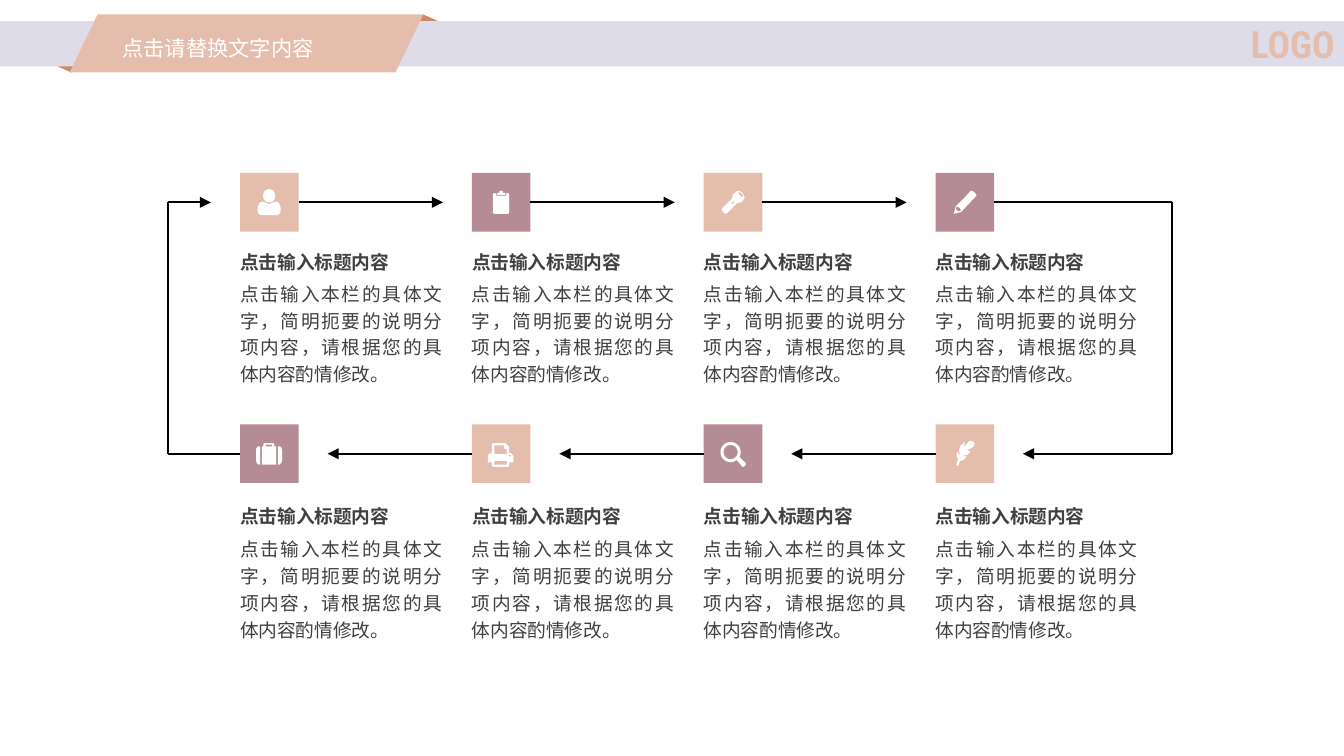
from dataclasses import dataclass
from math import cos, pi, sin
from typing import Any, NamedTuple

from lxml.etree import SubElement
from pptx import Presentation
from pptx.dml.color import RGBColor
from pptx.enum.shapes import MSO_CONNECTOR, MSO_SHAPE
from pptx.enum.text import MSO_ANCHOR, MSO_AUTO_SIZE, PP_ALIGN
from pptx.oxml.ns import qn
from pptx.util import Pt

PEACH = RGBColor(0xE4, 0xBD, 0xAC)
MAUVE = RGBColor(0xB5, 0x8C, 0x95)
RUST = RGBColor(0xCE, 0x88, 0x68)
LAVENDER = RGBColor(0xDE, 0xDC, 0xE9)
WHITE = RGBColor(0xFF, 0xFF, 0xFF)
BLACK = RGBColor(0, 0, 0)
GRAY = RGBColor(0x40, 0x40, 0x40)

CJK = "Noto Sans CJK SC"
HEADING = "点击输入标题内容"
BODY = "点击输入本栏的具体文字，简明扼要的说明分项内容，请根据您的具体内容酌情修改。"

LEFT, PITCH, TILE = 128.6, 124.2, 31.4
ARROW = 77.3
LOOP_LEFT, LOOP_RIGHT = 89.8, 627.8

Contour = list[tuple[float, float]]
Outline = list[Contour]


class Box(NamedTuple):
    x: float
    y: float
    w: float
    h: float


@dataclass
class Row:
    tile_y: float
    heading_y: float
    body_y: float
    colors: tuple[RGBColor, RGBColor]
    icons: list[list[Outline]]

    @property
    def mid(self) -> float:
        return self.tile_y + TILE / 2


def ellipse(cx: float, cy: float, rx: float, ry: float) -> Contour:
    angles = [2 * pi * i / 32 for i in range(32)]
    return [(cx + rx * cos(a), cy + ry * sin(a)) for a in angles]


CASE_SIDE = [(108, 117), (97, 117), (88, 126), (86, 138), (86, 195), (90, 207), (100, 215), (108, 215)]

PERSON = [
    [ellipse(156, 122, 32, 36)],
    [[(120, 153), (140, 160), (156, 167), (172, 160), (192, 153), (208, 160), (218, 185), (218, 205),
      (212, 220), (198, 226), (115, 226), (100, 220), (94, 205), (94, 185), (104, 160)]],
]
CLIPBOARD = [
    [[(113, 113), (120, 107), (126, 107), (133, 122), (181, 122), (188, 107), (194, 107), (200, 113),
      (200, 213), (194, 219), (120, 219), (113, 213)]],
    [[(133, 107), (146, 107), (149, 96), (165, 96), (168, 107), (181, 107), (177, 119), (137, 119)]],
]
FLASHLIGHT = [[
    [(212, 115), (200, 100), (186, 95), (176, 98), (156, 115), (153, 136), (98, 190), (98, 200),
     (106, 212), (118, 219), (126, 216), (180, 160), (200, 158), (217, 140), (219, 128)],
    [(185, 101), (196, 104), (208, 116), (212, 128), (200, 126), (188, 114)],
    [(150, 160), (158, 152), (164, 153), (163, 160), (155, 167), (149, 167)],
]]
PENCIL = [[
    [(98, 219), (108, 180), (150, 138), (189, 95), (198, 96), (213, 108), (220, 121), (178, 166), (137, 209)],
    [(108, 194), (113, 180), (118, 181), (130, 187), (137, 200), (132, 203), (122, 207), (117, 200)],
]]
SUITCASE = [
    [CASE_SIDE],
    [[(117, 215), (117, 117), (125, 117), (125, 105), (130, 100), (178, 100), (184, 105), (184, 117),
      (194, 117), (194, 215)],
     [(137, 117), (137, 108), (173, 108), (173, 117)]],
    [[(311 - x, y) for x, y in CASE_SIDE]],
]
PRINTER = [[
    [(108, 155), (108, 106), (115, 100), (178, 100), (200, 120), (200, 152), (212, 155), (222, 170),
     (222, 204), (200, 204), (200, 222), (196, 227), (112, 227), (108, 222), (108, 204), (86, 204),
     (86, 168), (95, 155)],
    [(120, 160), (120, 112), (172, 112), (172, 128), (178, 132), (188, 132), (188, 160)],
    [(120, 196), (188, 196), (188, 216), (120, 216)],
    ellipse(205, 168, 5, 5),
]]
MAGNIFIER = [
    [ellipse(144, 148, 54, 54), ellipse(144, 148, 38, 38)],
    [[(175, 188), (190, 172), (225, 207), (226, 216), (217, 226), (208, 227)]],
]
FEATHER = [[
    [(122, 223), (131, 196), (150, 191), (166, 173), (148, 167), (170, 163), (187, 146), (168, 138),
     (202, 122), (210, 101), (198, 90), (182, 88), (152, 122), (156, 94), (132, 116), (126, 140),
     (131, 170), (115, 143), (113, 165), (120, 188), (112, 216)],
]]

ROWS = [
    Row(92.7, 132.5, 149, (PEACH, MAUVE), [PERSON, CLIPBOARD, FLASHLIGHT, PENCIL]),
    Row(227.4, 268.6, 285.8, (MAUVE, PEACH), [SUITCASE, PRINTER, MAGNIFIER, FEATHER]),
]


def apply(obj: Any, fmt: dict[str, Any]) -> None:
    for name, value in fmt.items():
        setattr(obj, name, value)


def paint(sp: Any, color: RGBColor) -> None:
    sp.shadow.inherit = False
    sp.fill.solid()
    sp.fill.fore_color.rgb = color
    sp.line.fill.background()


def add_block(s: Any, kind: MSO_SHAPE, box: Box, color: RGBColor) -> Any:
    sp = s.shapes.add_shape(kind, *map(Pt, box))
    paint(sp, color)
    return sp


def add_icon(s: Any, outlines: list[Outline], x: float, y: float) -> None:
    for outline in outlines:
        fb = None
        for contour in outline:
            if fb is None:
                fb = s.shapes.build_freeform(*contour[0], scale=Pt(0.1))
            else:
                fb.move_to(*contour[0])
            fb.add_line_segments(contour[1:], close=True)
        paint(fb.convert_to_shape(Pt(x), Pt(y)), WHITE)


def write(sp: Any, text: str, font: str, size: float, color: RGBColor, bold: bool,
          frame: dict[str, Any], para: dict[str, Any]) -> None:
    tf = sp.text_frame
    apply(tf, {"word_wrap": True, **frame})
    p = tf.paragraphs[0]
    apply(p, para)
    r = p.add_run()
    r.text = text
    apply(r.font, {"name": font, "size": Pt(size), "bold": bold})
    r.font.color.rgb = color
    SubElement(r.font._element, qn("a:ea"), typeface=font)


def add_line(s: Any, x1: float, y1: float, x2: float, y2: float, arrow: bool = False,
             tile: Any = None, side: int = 0) -> None:
    c = s.shapes.add_connector(MSO_CONNECTOR.STRAIGHT, Pt(x1), Pt(y1), Pt(x2), Pt(y2))
    if tile is not None:
        c.begin_connect(tile, side)
    c.line.width = Pt(1)
    c.line.color.rgb = BLACK
    if arrow:
        SubElement(c.line._get_or_add_ln(), qn("a:tailEnd"), type="triangle")
    SubElement(c._element.spPr, qn("a:effectLst"))


def inset(x: float, y: float) -> dict[str, Any]:
    return {"margin_left": Pt(x), "margin_right": Pt(x), "margin_top": Pt(y), "margin_bottom": Pt(y)}


def add_banner(s: Any) -> None:
    add_block(s, MSO_SHAPE.ISOSCELES_TRIANGLE, Box(194.4, 7.8, 64.8, 14.4), RUST)
    add_block(s, MSO_SHAPE.ISOSCELES_TRIANGLE, Box(5.8, 24.4, 64.8, 14.4), RUST).rotation = 180
    band = add_block(s, MSO_SHAPE.RECTANGLE, Box(0, 11.3, 720, 24.3), LAVENDER)
    write(band, "LOGO", "Roboto Condensed", 20, PEACH, True,
          {"vertical_anchor": MSO_ANCHOR.MIDDLE, **inset(5, 2.9)}, {"alignment": PP_ALIGN.RIGHT})
    ribbon = add_block(s, MSO_SHAPE.PARALLELOGRAM, Box(37.4, 7.8, 189.4, 31), PEACH)
    ribbon.adjustments[0] = 0.48
    title = s.shapes.title
    title.element.getparent().append(title.element)
    apply(title, {"left": Pt(60.5), "top": Pt(9.4), "width": Pt(141.8), "height": Pt(25.9)})
    write(title, "点击请替换文字内容", "Arial", 11.4, WHITE, False,
          {"vertical_anchor": MSO_ANCHOR.TOP, "auto_size": MSO_AUTO_SIZE.NONE, **inset(5, 2.9)},
          {"alignment": PP_ALIGN.LEFT, "line_spacing": 1.5, "space_before": Pt(0)})


def add_row(s: Any, row: Row) -> list[Any]:
    tiles = []
    for i, icon in enumerate(row.icons):
        x = LEFT + i * PITCH
        tiles.append(add_block(s, MSO_SHAPE.RECTANGLE, Box(x, row.tile_y, TILE, TILE), row.colors[i % 2]))
        add_icon(s, icon, x, row.tile_y)
        body = s.shapes.add_textbox(Pt(x), Pt(row.body_y), Pt(108.2), Pt(58))
        write(body, BODY, CJK, 10, GRAY, False, {"auto_size": MSO_AUTO_SIZE.SHAPE_TO_FIT_TEXT, **inset(0, 0)},
              {"alignment": PP_ALIGN.JUSTIFY, "line_spacing": 1.2})
        heading = s.shapes.add_textbox(Pt(x - 7), Pt(row.heading_y), Pt(98), Pt(15.8))
        write(heading, HEADING, CJK, 10, GRAY, True, {"vertical_anchor": MSO_ANCHOR.MIDDLE},
              {"space_before": Pt(2)})
    return tiles


def add_cycle(s: Any, upper: list[Any], lower: list[Any]) -> None:
    top, bottom = (row.mid for row in ROWS)
    for i in range(3):
        right, left = LEFT + i * PITCH + TILE, LEFT + (i + 1) * PITCH
        add_line(s, right, top, right + ARROW, top, True, upper[i], 3)
        add_line(s, left, bottom, left - ARROW, bottom, True, lower[i + 1], 1)
    add_line(s, LEFT + 3 * PITCH + TILE, top, LOOP_RIGHT, top, False, upper[3], 3)
    add_line(s, LOOP_RIGHT, top, LOOP_RIGHT, bottom)
    add_line(s, LOOP_RIGHT, bottom, 548, bottom, True)
    add_line(s, LEFT, bottom, LOOP_LEFT, bottom, False, lower[0], 1)
    add_line(s, LOOP_LEFT, bottom, LOOP_LEFT, top)
    add_line(s, LOOP_LEFT, top, 113, top, True)


def main() -> None:
    prs = Presentation()
    apply(prs, {"slide_width": Pt(720), "slide_height": Pt(405)})
    s = prs.slides.add_slide(prs.slide_layouts[5])
    add_banner(s)
    upper, lower = [add_row(s, row) for row in ROWS]
    add_cycle(s, upper, lower)
    prs.save("out.pptx")


if __name__ == "__main__":
    main()
